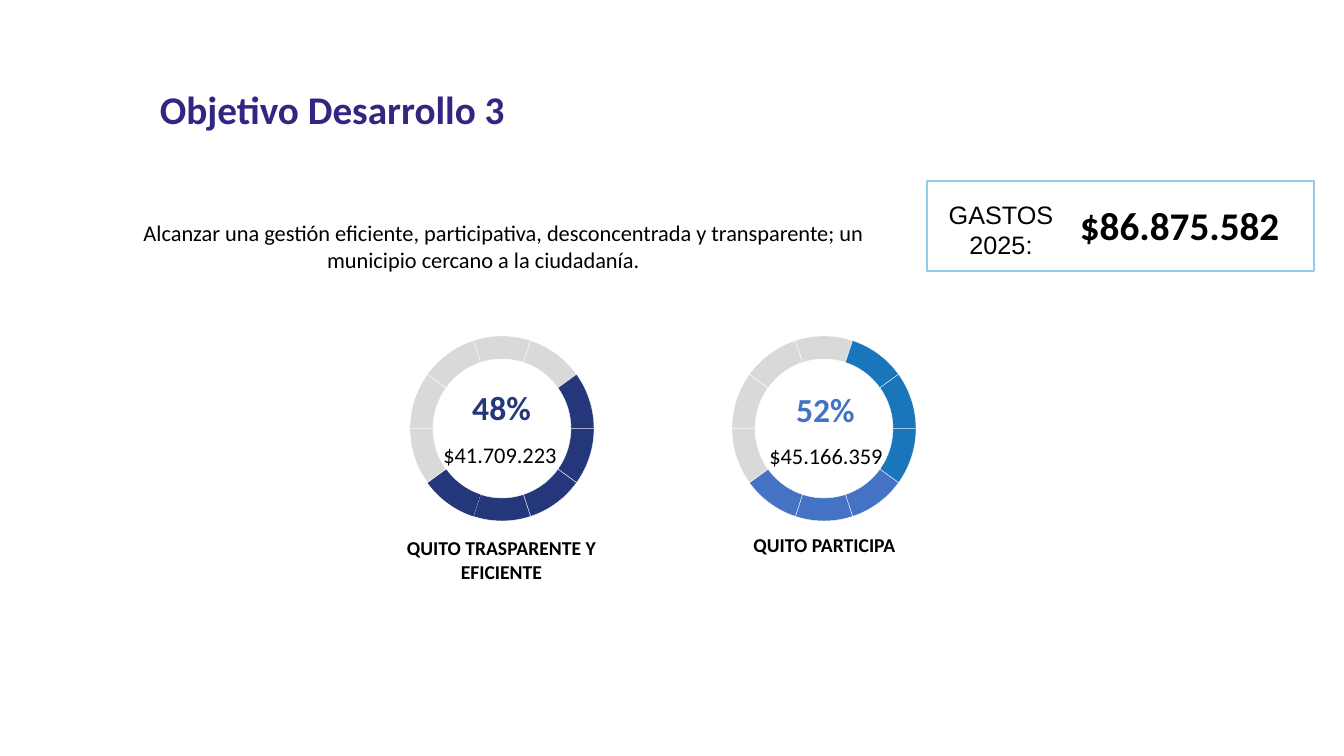
from lxml import etree
from pptx import Presentation
from pptx.dml.color import RGBColor
from pptx.enum.shapes import MSO_SHAPE
from pptx.enum.text import MSO_ANCHOR, MSO_AUTO_SIZE, PP_ALIGN
from pptx.oxml.ns import qn
from pptx.util import Pt

ARC, RECT = MSO_SHAPE.BLOCK_ARC, MSO_SHAPE.RECTANGLE
TOP, MID = MSO_ANCHOR.TOP, MSO_ANCHOR.MIDDLE
LEFT, CENTER = PP_ALIGN.LEFT, PP_ALIGN.CENTER
GROW = MSO_AUTO_SIZE.SHAPE_TO_FIT_TEXT
PX = 9071.43  # EMU per px

HEX = {
    "black": "000000", "white": "FFFFFF", "violet": "312783", "navy": "25377B",
    "azure": "1A76BB", "blue": "4472C4", "gray": "D9D9D9", "sky": "95CAEB",
}

# Content; boxes are left, top, width, height in px
TITLE = "Objetivo Desarrollo 3"
GOAL = ("Alcanzar una gestión eficiente, participativa, desconcentrada y "
        "transparente; un municipio cercano a la ciudadanía.\t")
COST = "GASTOS 2025:"
TOTAL = "$86.875.582"

# Ten arcs per ring, clockwise from the right; "bare" arcs have no outline
RINGS = [
    {"box": (410, 336, 184, 185), "bare": [3],
     "arcs": ["navy"] * 4 + ["gray"] * 5 + ["navy"],
     "share": ("48%", "navy", (416, 382, 171, 50)),
     "money": ("$41.709.223", (398, 436, 204, 37)),
     "label": ("QUITO TRASPARENTE Y EFICIENTE", (377, 531, 249, 57))},
    {"box": (732, 336, 184, 185), "bare": [],
     "arcs": ["azure"] + ["blue"] * 3 + ["gray"] * 4 + ["azure"] * 2,
     "share": ("52%", "blue", (740, 384, 171, 50)),
     "money": ("$45.166.359", (724, 437, 204, 37)),
     "label": ("QUITO PARTICIPA", (700, 528, 249, 34))},
]
STEP = 21.6  # 36 degrees in adjustment units
THICK = 0.125


def emu(box):
    return [round(n * PX) for n in box]


def rgb(name):
    return RGBColor.from_string(HEX[name])


def add_box(shapes, kind, box, fill=None, line=None, width=1):
    shape = shapes.add_shape(kind, *emu(box))
    shape.shadow.inherit = False
    if fill:
        shape.fill.solid()
        shape.fill.fore_color.rgb = rgb(fill)
    else:
        shape.fill.background()
    if line:
        shape.line.color.rgb = rgb(line)
        shape.line.width = Pt(width)
    else:
        shape.line.fill.background()
    return shape


def write(shape, text, size, color="black", bold=False, font="Calibri",
          align=CENTER, anchor=MID, wrap=True, grow=True):
    frame = shape.text_frame
    frame.text = text
    frame.word_wrap = wrap
    frame.vertical_anchor = anchor
    if grow:
        frame.auto_size = GROW
    para = frame.paragraphs[0]
    para.alignment = align
    face = para.runs[0].font
    face.name, face.size, face.bold = font, Pt(size), bold
    face.color.rgb = rgb(color)
    return para


def add_text(box, text, size, **style):
    return write(slide.shapes.add_textbox(*emu(box)), text, size, **style)


deck = Presentation()
deck.slide_width, deck.slide_height = emu((1344, 756))
slide = deck.slides.add_slide(deck.slide_layouts[6])

# Heading and goal
add_text((100, 195, 807, 102), GOAL, 16, grow=False)
head = add_text((150, 46, 433, 132), TITLE, 28, color="violet", bold=True,
                align=LEFT, grow=False)
head.line_spacing = 0.9

# Rings with their figures
for ring in RINGS:
    group = slide.shapes.add_group_shape()
    for i, color in enumerate(ring["arcs"]):
        edge = None if i in ring["bare"] else "white"
        arc = add_box(group.shapes, ARC, ring["box"], color, edge, 0.25)
        arc.adjustments[0] = i * STEP
        arc.adjustments[1] = (i + 1) % len(ring["arcs"]) * STEP
        arc.adjustments[2] = THICK
    text, box = ring["label"]
    add_text(box, text, 14, bold=True, anchor=TOP)
    text, color, box = ring["share"]
    add_text(box, text, 24, color=color, bold=True)
    text, box = ring["money"]
    add_text(box, text, 16)

# Total spending
cost = add_box(slide.shapes, RECT, (933, 194, 136, 72), "white")
tint = cost.fill._xPr.find(qn("a:solidFill"))[0]
etree.SubElement(tint, qn("a:alpha")).set("val", "42000")
write(cost, COST, 18, font="Arial", anchor=TOP)
add_text((1070, 196, 223, 57), TOTAL, 28, bold=True, align=LEFT, anchor=TOP,
         wrap=False)
add_box(slide.shapes, RECT, (927, 181, 387, 90), line="sky")

deck.save("out.pptx")
